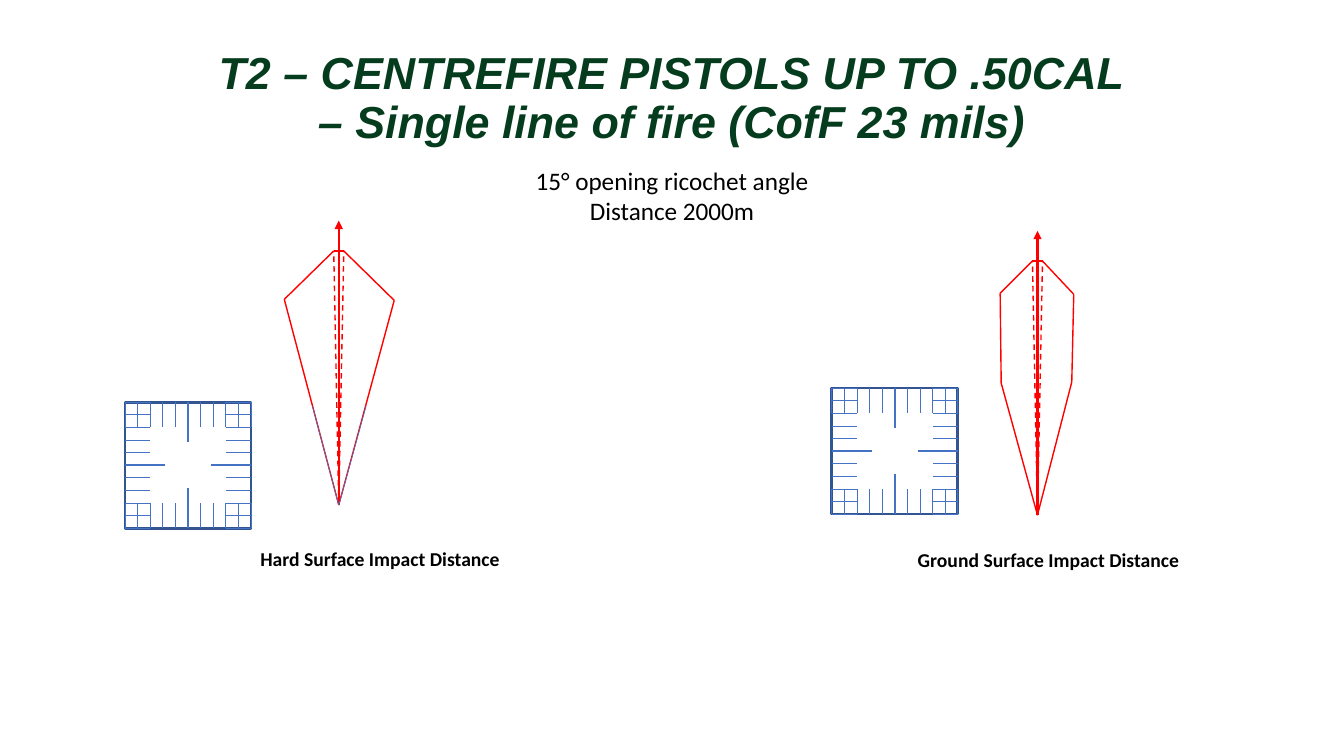
from lxml import etree
from pptx import Presentation
from pptx.dml.color import RGBColor
from pptx.enum.dml import MSO_LINE
from pptx.enum.shapes import MSO_CONNECTOR, MSO_SHAPE
from pptx.enum.text import MSO_ANCHOR, PP_ALIGN
from pptx.oxml.ns import qn
from pptx.util import Inches, Pt

STRAIGHT, RECT = MSO_CONNECTOR.STRAIGHT, MSO_SHAPE.RECTANGLE
DASH, CENTER = MSO_LINE.DASH, PP_ALIGN.CENTER
TOP, MIDDLE = MSO_ANCHOR.TOP, MSO_ANCHOR.MIDDLE

# Content: lines, box (left, top, width, height), anchor, line spacing, format
TITLE = dict(name="Arial", size=Pt(32), bold=True, italic=True)
BODY = dict(name="Calibri", size=Pt(18))
LABEL = dict(name="Calibri", size=Pt(14), bold=True)
GREEN, BLACK, RED, BLUE, NAVY = "053C1E", "000000", "FF0000", "4472C4", "325491"
TEXTS = [
    (["T2 – CENTREFIRE PISTOLS UP TO .50CAL", "– Single line of fire (CofF 23 mils)"],
     (0, 0.43, 13.33, 1.11), MIDDLE, 0.9, TITLE, GREEN),
    (["15° opening ricochet angle", "Distance 2000m"],
     (4.62, 1.59, 4.09, 0.71), TOP, 1, BODY, BLACK),
    (["Hard Surface Impact Distance"], (1.88, 5.38, 3.78, 0.34), TOP, 1, LABEL, BLACK),
    (["Ground Surface Impact Distance"], (8.51, 5.39, 3.78, 0.57), TOP, 1, LABEL, BLACK),
]

# Danger areas: firing point, then outline points relative to it
HARD_AREA = ((3.36, 5.01), [(0, 0), (-0.54, -2.04), (-0.05, -2.52), (0.05, -2.52),
                            (0.55, -2.03), (0, 0)])
GROUND_AREA = ((10.29, 5.11), [(0, 0), (-0.36, -1.31), (-0.37, -2.2), (-0.05, -2.52),
                               (0.05, -2.52), (0.36, -2.19), (0.34, -1.32), (0, 0)])
ARROW_LENGTH, CONE_LENGTH, CONE_HALF = 2.82, 2.52, 0.05
HARD_EDGES = [(-0.26, -0.98), (0.27, -0.98)]

# Romer grids: left, top
HARD_GRID, GROUND_GRID = (1.24, 3.99), (8.25, 3.85)
GRID_SIZE, GRID_STEPS = 1.25, 10
TICK, LONG_TICK = 0.25, 0.4

prs = Presentation()
prs.slide_width, prs.slide_height = Inches(13.33), Inches(7.5)
s = prs.slides.add_slide(prs.slide_layouts[6])


def rgb(color):
    return RGBColor.from_string(color)


def add_line(shapes, start, end, color, width, dash=None, arrow=False):
    cx = shapes.add_connector(STRAIGHT, *map(Inches, (*start, *end)))
    cx.line.color.rgb = rgb(color)
    cx.line.width = Pt(width)
    if dash:
        cx.line.dash_style = dash
    if arrow:
        etree.SubElement(cx.line._get_or_add_ln(), qn("a:tailEnd"), type="triangle")
    etree.SubElement(cx._element.spPr, qn("a:effectLst"))


def add_text(lines, box, anchor, spacing, style, color):
    tf = s.shapes.add_textbox(*map(Inches, box)).text_frame
    tf.word_wrap = True
    tf.vertical_anchor = anchor
    for i, line in enumerate(lines):
        p = tf.paragraphs[0] if i == 0 else tf.add_paragraph()
        p.alignment, p.line_spacing = CENTER, spacing
        r = p.add_run()
        r.text = line
        r.font.color.rgb = rgb(color)
        for key, value in style.items():
            setattr(r.font, key, value)


def add_area(origin, outline, blue_edges=()):
    shapes = s.shapes.add_group_shape().shapes
    x, y = origin
    add_line(shapes, origin, (x, y - ARROW_LENGTH), RED, 1.5, arrow=True)
    for dx in (-CONE_HALF, CONE_HALF):
        add_line(shapes, origin, (x + dx, y - CONE_LENGTH), RED, 1, DASH)
    points = [(x + dx, y + dy) for dx, dy in outline]
    for start, end in zip(points, points[1:]):
        add_line(shapes, start, end, RED, 1)
    for dx, dy in blue_edges:
        add_line(shapes, origin, (x + dx, y + dy), BLUE, 0.5)


def add_grid(left, top):
    shapes = s.shapes.add_group_shape().shapes
    sp = shapes.add_shape(RECT, *map(Inches, (left, top, GRID_SIZE, GRID_SIZE)))
    sp.shadow.inherit = False
    sp.fill.background()
    sp.line.color.rgb = rgb(NAVY)
    sp.line.width = Pt(2)
    right, bottom = left + GRID_SIZE, top + GRID_SIZE
    for i in range(GRID_STEPS + 1):
        middle = i == GRID_STEPS // 2
        length, width = (LONG_TICK, 1.75) if middle else (TICK, 0.5)
        offset = i * GRID_SIZE / GRID_STEPS
        x, y = left + offset, top + offset
        for start, end in [((left, y), (left + length, y)),
                           ((right, y), (right - length, y)),
                           ((x, top), (x, top + length)),
                           ((x, bottom), (x, bottom - length))]:
            add_line(shapes, start, end, BLUE, width)


# Drawings, then text
add_grid(*GROUND_GRID)
add_area(*GROUND_AREA)
add_area(*HARD_AREA, HARD_EDGES)
add_grid(*HARD_GRID)
for text in TEXTS:
    add_text(*text)

prs.save("out.pptx")
